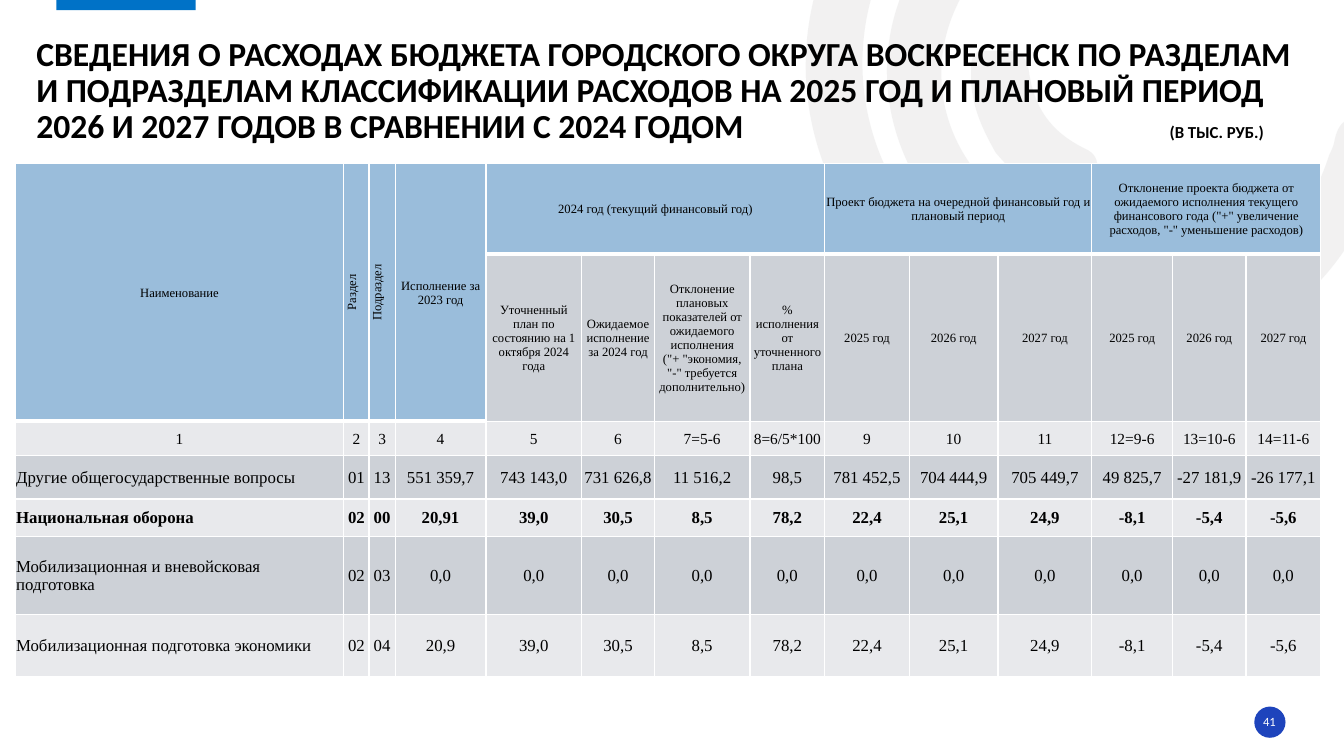
from math import cos, radians, sin

from lxml.etree import SubElement
from pptx import Presentation
from pptx.dml.color import RGBColor
from pptx.enum.shapes import MSO_SHAPE
from pptx.enum.text import MSO_ANCHOR, PP_ALIGN
from pptx.oxml.ns import qn
from pptx.util import Inches, Pt

TITLE = ("СВЕДЕНИЯ О РАСХОДАХ БЮДЖЕТА ГОРОДСКОГО ОКРУГА ВОСКРЕСЕНСК ПО РАЗДЕЛАМ "
         "И ПОДРАЗДЕЛАМ КЛАССИФИКАЦИИ РАСХОДОВ НА 2025 ГОД И ПЛАНОВЫЙ ПЕРИОД "
         "2026 И 2027 ГОДОВ В СРАВНЕНИИ С 2024 ГОДОМ")
UNIT = "(В ТЫС. РУБ.)"

ARC_ROTATION = 144.2
# Frame before rotation, start point, Bezier segments of six coordinates each
BACKGROUND_ARCS = [
    ((8.13, -2.02, 4.85, 6), (8.51, 2.29), [
        (7.99, 1.49, 7.87, 0.5, 8.38, -0.5), (8.9, -1.52, 9.76, -2.03, 10.9, -2.07),
        (11.05, -2.07, 11.21, -2.1, 11.31, -1.95), (11.44, -1.75, 11.27, -1.54, 10.98, -1.54),
        (9.67, -1.54, 8.65, -0.59, 8.6, 0.68), (8.56, 1.81, 9.36, 2.81, 10.46, 3.02),
        (11.6, 3.24, 12.7, 2.61, 13.07, 1.52), (13.09, 1.48, 13.11, 1.44, 13.12, 1.4),
        (13.16, 1.19, 13.27, 1.11, 13.49, 1.17), (13.73, 1.24, 13.67, 1.41, 13.61, 1.56),
        (13.34, 2.45, 12.78, 3.07, 11.91, 3.41), (10.7, 3.87, 9.36, 3.45, 8.51, 2.29)]),
    ((9.01, -0.78, 2.13, 4.26), (9.22, 1.99), [
        (8.62, 1.15, 8.69, 0.07, 9.4, -0.68), (9.51, -0.79, 9.62, -0.95, 9.8, -0.78),
        (9.95, -0.64, 9.97, -0.5, 9.79, -0.32), (9.25, 0.26, 9.2, 1.08, 9.65, 1.68),
        (10.08, 2.29, 10.88, 2.49, 11.61, 2.15), (11.82, 2.05, 11.93, 2.12, 12.03, 2.29),
        (12.13, 2.5, 11.97, 2.56, 11.83, 2.63), (10.96, 3.1, 9.83, 2.82, 9.22, 1.99)]),
    ((9.8, 0.37, 0.78, 1.83), (9.87, 1.51), [
        (9.75, 1.3, 9.64, 1.07, 9.64, 0.82), (9.64, 0.73, 9.61, 0.57, 9.76, 0.58),
        (9.92, 0.59, 10.13, 0.53, 10.16, 0.76), (10.21, 1.1, 10.36, 1.32, 10.67, 1.48),
        (10.88, 1.57, 10.76, 1.76, 10.72, 1.89), (10.68, 2.06, 10.55, 1.98, 10.45, 1.94),
        (10.21, 1.87, 10.03, 1.7, 9.87, 1.51)]),
]

COLUMN_WIDTHS = [3.26, 0.25, 0.26, 0.9, 0.95, 0.72, 0.95, 0.74, 0.84, 0.88, 0.93, 0.8, 0.73, 0.74]
ROW_HEIGHTS = [0.9, 1.66, 0.34, 0.43, 0.37, 0.78, 0.61]
ROW_SIZES = [9, 9, 11, 12, 12, 12, 12]
BOLD_ROW = 4
LABEL_COLUMNS = 4
VERTICAL_COLUMNS = (1, 2)
GROUPS = [(4, 7), (8, 10), (11, 13)]
YEARS = ["2025 год", "2026 год", "2027 год"]
ROWS = [
    ["Наименование", "Раздел", "Подраздел", "Исполнение за 2023 год",
     "2024 год (текущий финансовый год)", "", "", "",
     "Проект бюджета на очередной финансовый год и плановый период", "", "",
     'Отклонение проекта бюджета от ожидаемого исполнения текущего финансового года '
     '("+" увеличение расходов, "-" уменьшение расходов)', "", ""],
    ["", "", "", "", "Уточненный план по состоянию на 1 октября 2024 года",
     "Ожидаемое исполнение за 2024 год",
     'Отклонение плановых показателей от ожидаемого исполнения\v("+ "экономия, '
     '"-" требуется дополнительно)',
     "% исполнения от уточненного плана", *YEARS, *YEARS],
    ["1", "2", "3", "4", "5", "6", "7=5-6", "8=6/5*100", "9", "10", "11",
     "12=9-6", "13=10-6", "14=11-6"],
    ["Другие общегосударственные вопросы", "01", "13", "551 359,7", "743 143,0", "731 626,8",
     "11 516,2", "98,5", "781 452,5", "704 444,9", "705 449,7",
     "49 825,7", "-27 181,9", "-26 177,1"],
    ["Национальная оборона", "02", "00", "20,91", "39,0", "30,5", "8,5", "78,2",
     "22,4", "25,1", "24,9", "-8,1", "-5,4", "-5,6"],
    ["Мобилизационная и вневойсковая подготовка", "02", "03"] + ["0,0"] * 11,
    ["Мобилизационная подготовка экономики", "02", "04", "20,9", "39,0", "30,5", "8,5", "78,2",
     "22,4", "25,1", "24,9", "-8,1", "-5,4", "-5,6"],
]


def rgb(value):
    return RGBColor.from_string(value)


def turn_back(x, y):
    """Undo the rotation of the arcs for one point."""
    angle = radians(ARC_ROTATION)
    return x * cos(angle) + y * sin(angle), y * cos(angle) - x * sin(angle)


def curve_range(curves, axis):
    """Lowest and highest value that a chain of cubic curves reaches on an axis."""
    values = []
    for curve in curves:
        p0, p1, p2, p3 = (point[axis] for point in curve)
        for t in (step / 20 for step in range(21)):
            u = 1 - t
            values.append(u**3 * p0 + 3 * u * u * t * p1 + 3 * u * t * t * p2 + t**3 * p3)
    return min(values), max(values)


class BudgetSlide:
    heading_font, table_font = "Calibri", "Times New Roman"
    black, white = "000000", "FFFFFF"
    accent, badge, arc = "0072C7", "1E44BC", "E7E6E6"
    header, band_dark, band_light = "9ABDDB", "CDD1D7", "E8E9EC"

    def __init__(self, deck):
        self.slide = deck.slides.add_slide(deck.slide_layouts[6])

    def paint(self, shape, color):
        shape.shadow.inherit = False
        shape.fill.solid()
        shape.fill.fore_color.rgb = rgb(color)
        shape.line.fill.background()

    def format(self, run, font, size, color, bold=False):
        run.font.name, run.font.size, run.font.bold = font, Pt(size), bold
        run.font.color.rgb = rgb(color)

    def background_arc(self, frame, start, segments):
        """Fit the curves, turned upright, into the frame and rotate the shape."""
        box = [Inches(length) for length in frame]
        points = [turn_back(*start)]
        for s in segments:
            points += [turn_back(*s[i:i + 2]) for i in (0, 2, 4)]
        curves = [points[i:i + 4] for i in range(0, len(points) - 1, 3)]
        ranges = [curve_range(curves, axis) for axis in (0, 1)]
        fitted = [[round((point[a] - ranges[a][0]) / (ranges[a][1] - ranges[a][0]) * box[a + 2])
                   for a in (0, 1)] for point in points]

        builder = self.slide.shapes.build_freeform(*fitted[0])
        builder.add_line_segments(fitted[3::3], close=True)
        arc = builder.convert_to_shape()
        arc.left, arc.top, arc.width, arc.height = box
        arc.rotation = ARC_ROTATION
        outline = arc._element.find(".//" + qn("a:path"))
        outline.set("w", str(box[2]))
        outline.set("h", str(box[3]))
        commands = [(outline.find(qn("a:moveTo")), fitted[:1])]
        for i, edge in enumerate(outline.findall(qn("a:lnTo"))):
            edge.tag = qn("a:cubicBezTo")
            commands.append((edge, fitted[3 * i + 1:3 * i + 4]))
        for command, targets in commands:
            for old in list(command):
                command.remove(old)
            for x, y in targets:
                SubElement(command, qn("a:pt"), x=str(x), y=str(y))

        self.paint(arc, self.arc)
        color = arc._element.spPr.find(qn("a:solidFill")).find(qn("a:srgbClr"))
        SubElement(color, qn("a:alpha"), val="53000")

    def shape(self, kind, box, color):
        self.paint(self.slide.shapes.add_shape(kind, *map(Inches, box)), color)

    def text_box(self, box, anchor):
        """Add an empty box without margins and return its text frame."""
        frame = self.slide.shapes.add_textbox(*map(Inches, box)).text_frame
        frame.word_wrap = True
        frame.vertical_anchor = anchor
        frame.margin_left = frame.margin_right = frame.margin_top = frame.margin_bottom = 0
        return frame

    def title(self, box, heading, unit, unit_offset):
        paragraph = self.text_box(box, MSO_ANCHOR.BOTTOM).paragraphs[0]
        paragraph.line_spacing = 0.9
        tabs = SubElement(paragraph._p.get_or_add_pPr(), qn("a:tabLst"))
        SubElement(tabs, qn("a:tab"), pos=str(Inches(unit_offset)), algn="l")
        for words, size in ((heading + "\t", 24), (unit, 12)):
            run = paragraph.add_run()
            run.text = words
            self.format(run, self.heading_font, size, self.black, True)

    def page_number(self, box, number):
        paragraph = self.text_box(box, MSO_ANCHOR.MIDDLE).paragraphs[0]
        paragraph.text = number
        paragraph.alignment = PP_ALIGN.CENTER
        self.format(paragraph.runs[0], self.heading_font, 9, self.white)

    def borders(self, cell, bottom):
        properties = cell._tc.get_or_add_tcPr()
        for side, width in (("L", 1), ("R", 1), ("T", 1), ("B", bottom)):
            line = SubElement(properties, qn("a:ln" + side), w=str(Pt(width)))
            SubElement(SubElement(line, qn("a:solidFill")), qn("a:srgbClr"), val=self.white)

    def cell(self, cell, row, column, words):
        in_header = row == 0 or (row == 1 and column < LABEL_COLUMNS)
        self.borders(cell, 3 if in_header else 1)
        cell.fill.solid()
        band = self.band_dark if row % 2 else self.band_light
        cell.fill.fore_color.rgb = rgb(self.header if in_header else band)
        cell.vertical_anchor = MSO_ANCHOR.MIDDLE
        cell.margin_left = cell.margin_right = cell.margin_top = Inches(0.01)
        cell.margin_bottom = 0
        if row == 0 and column in VERTICAL_COLUMNS:
            cell._tc.get_or_add_tcPr().set("vert", "vert270")
        if words:
            paragraph = cell.text_frame.paragraphs[0]
            paragraph.text = words
            is_name = column == 0 and row > 2
            paragraph.alignment = PP_ALIGN.LEFT if is_name else PP_ALIGN.CENTER
            for run in paragraph.runs:
                self.format(run, self.table_font, ROW_SIZES[row], self.black, row == BOLD_ROW)

    def table(self, left, top):
        table = self.slide.shapes.add_table(
            len(ROWS), len(COLUMN_WIDTHS), Inches(left), Inches(top),
            Inches(sum(COLUMN_WIDTHS)), Inches(sum(ROW_HEIGHTS))).table
        for column, width in zip(table.columns, COLUMN_WIDTHS):
            column.width = Inches(width)
        for row, height in zip(table.rows, ROW_HEIGHTS):
            row.height = Inches(height)
        for r, texts in enumerate(ROWS):
            for c, words in enumerate(texts):
                self.cell(table.cell(r, c), r, c, words)
        for c in range(LABEL_COLUMNS):
            table.cell(0, c).merge(table.cell(1, c))
        for first, last in GROUPS:
            table.cell(0, first).merge(table.cell(0, last))


def main():
    deck = Presentation()
    deck.slide_width, deck.slide_height = Inches(13.33), Inches(7.5)
    budget = BudgetSlide(deck)
    for frame, start, segments in BACKGROUND_ARCS:
        budget.background_arc(frame, start, segments)
    budget.shape(MSO_SHAPE.RECTANGLE, (0.56, -0.02, 1.38, 0.12), budget.accent)
    budget.shape(MSO_SHAPE.OVAL, (12.44, 7.01, 0.31, 0.31), budget.badge)
    budget.page_number((12.43, 7.06, 0.32, 0.2), "41")
    budget.table(0.15, 1.62)
    budget.title((0.36, 0.15, 12.68, 1.3), TITLE, UNIT, 11.24)
    deck.save("out.pptx")


if __name__ == "__main__":
    main()
